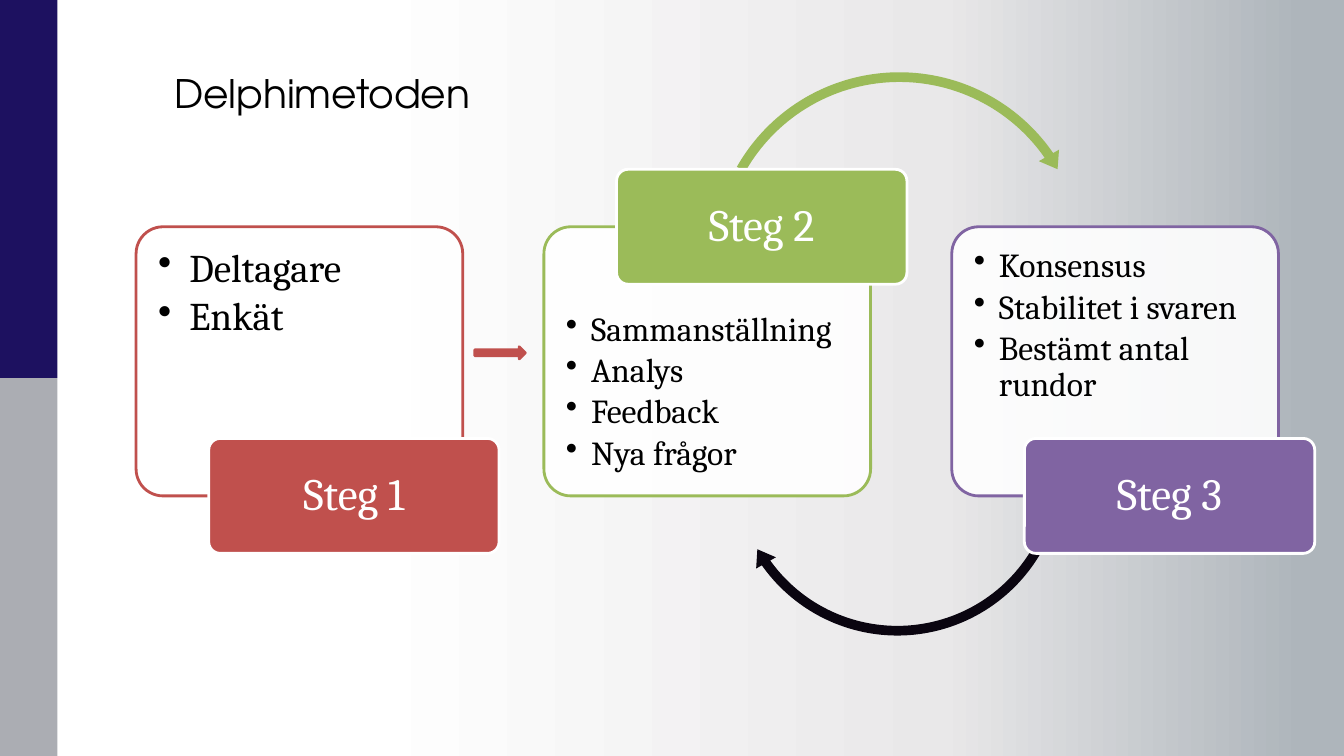
from copy import deepcopy
from lxml.etree import SubElement
from pptx import Presentation
from pptx.dml.color import RGBColor
from pptx.enum.shapes import MSO_SHAPE
from pptx.enum.text import MSO_ANCHOR, PP_ALIGN
from pptx.oxml.ns import qn
from pptx.util import Inches, Pt

RED, GREEN, PURPLE = "C0504D", "9BBB59", "8064A2"


def color(code):
    return RGBColor.from_string(code)


def add(kind, left, top, width, height, fill, line=None):
    shape = slide.shapes.add_shape(
        kind, Inches(left), Inches(top), Inches(width), Inches(height))
    shape.shadow.inherit = False
    shape.fill.solid()
    shape.fill.fore_color.rgb = color(fill)
    if line:
        shape.line.color.rgb = color(line)
        shape.line.width = Pt(2)
    else:
        shape.line.fill.background()
    return shape


prs = Presentation()
prs.slide_width, prs.slide_height = Inches(13.33), Inches(7.5)
slide = prs.slides.add_slide(prs.slide_layouts[6])

# Gradient backdrop
back = add(MSO_SHAPE.RECTANGLE, 0, 0, 13.33, 7.5, "FFFFFF")
back.fill.gradient()
back.fill.gradient_angle = 0
stops = back._element.spPr.find(qn("a:gradFill")).find(qn("a:gsLst"))
stops.append(deepcopy(stops[0]))
shades = [(0.27, "FFFFFF"), (0.7, "E9E8E9"), (0.97, "AEB5BB")]
for stop, (place, shade) in zip(back.fill.gradient_stops, shades):
    stop.position = place
    stop.color.rgb = color(shade)

# Side bands
for row, shade in enumerate(["1D1160", "ABADB3"]):
    add(MSO_SHAPE.RECTANGLE, -0.02, row * 3.75, 0.59, 3.75, shade)

# Title
title = slide.shapes.add_textbox(
    Inches(1.63), Inches(0.3), Inches(11.04), Inches(1.25))
frame = title.text_frame
frame.word_wrap = True
frame.vertical_anchor = MSO_ANCHOR.MIDDLE
frame.text = "Delphimetoden"
font = frame.paragraphs[0].runs[0].font
font.name, font.size = "TeX Gyre Adventor", Pt(28)
font.color.rgb = color("000000")

# Arrows between the steps: angles in degrees, clockwise from the right
add(MSO_SHAPE.RIGHT_ARROW, 4.71, 3.44, 0.5, 0.12, RED, RED)
arcs = [
    (7.19, 2.95, 3.42, "0A0510", 0.028, 5.77, 144.63, 29.6, 0.033),
    (7, 0.65, 3.84, GREEN, 0.025, 5.12, 325.29, 209.59, 0.03),
]
for left, top, size, shade, thick, head, end, start, wing in arcs:
    arc = add(MSO_SHAPE.CIRCULAR_ARROW, left, top, size, size, shade)
    values = [thick, head * 0.6, end * 0.6, start * 0.6, wing]
    for index, value in enumerate(values):
        arc.adjustments[index] = value

# Steps: colour, text size, indent, top inset, label top, bullets
steps = [
    (RED, 28, 0.31, 0.14, 4.35, ["Deltagare", "Enkät"]),
    (GREEN, 24, 0.25, 0.77, 1.68,
     ["Sammanställning", "Analys", "Feedback", "Nya frågor"]),
    (PURPLE, 24, 0.25, 0.14, 4.35,
     ["Konsensus", "Stabilitet i svaren", "Bestämt antal rundor"]),
]
for index, (shade, size, indent, inset, high, items) in enumerate(steps):
    left = 1.35 + index * 4.045

    # Panel with bullets
    panel = add(MSO_SHAPE.ROUNDED_RECTANGLE, left, 2.25, 3.24, 2.67,
                "FFFFFF", shade)
    panel.adjustments[0] = 0.1
    solid = panel._element.spPr.find(qn("a:solidFill"))
    SubElement(solid[0], qn("a:alpha")).set("val", "90000")
    frame = panel.text_frame
    frame.word_wrap = True
    frame.vertical_anchor = MSO_ANCHOR.TOP
    frame.margin_left = frame.margin_right = Inches(0.14)
    frame.margin_top, frame.margin_bottom = Inches(inset), Inches(0.14)
    frame.text = "\n".join(items)
    for para in frame.paragraphs:
        props = para._p.get_or_add_pPr()
        props.set("marL", str(Inches(indent)))
        props.set("indent", str(-Inches(indent)))
        SubElement(props, qn("a:buChar")).set("char", "•")
        para.alignment = PP_ALIGN.LEFT
        para.line_spacing = 0.9
        para.space_after = Pt(size * 0.15)
        font = para.runs[0].font
        font.name, font.size = "Cambria", Pt(size)
        font.color.rgb = color("000000")

    # Step label
    label = add(MSO_SHAPE.ROUNDED_RECTANGLE, left + 0.72, high, 2.88, 1.14,
                shade, "FFFFFF")
    label.adjustments[0] = 0.1
    frame = label.text_frame
    frame.word_wrap = True
    frame.vertical_anchor = MSO_ANCHOR.MIDDLE
    frame.text = f"Steg {index + 1}"
    para = frame.paragraphs[0]
    para.alignment = PP_ALIGN.CENTER
    para.line_spacing = 0.9
    font = para.runs[0].font
    font.name, font.size = "Cambria", Pt(32)
    font.color.rgb = color("FFFFFF")

prs.save("out.pptx")
